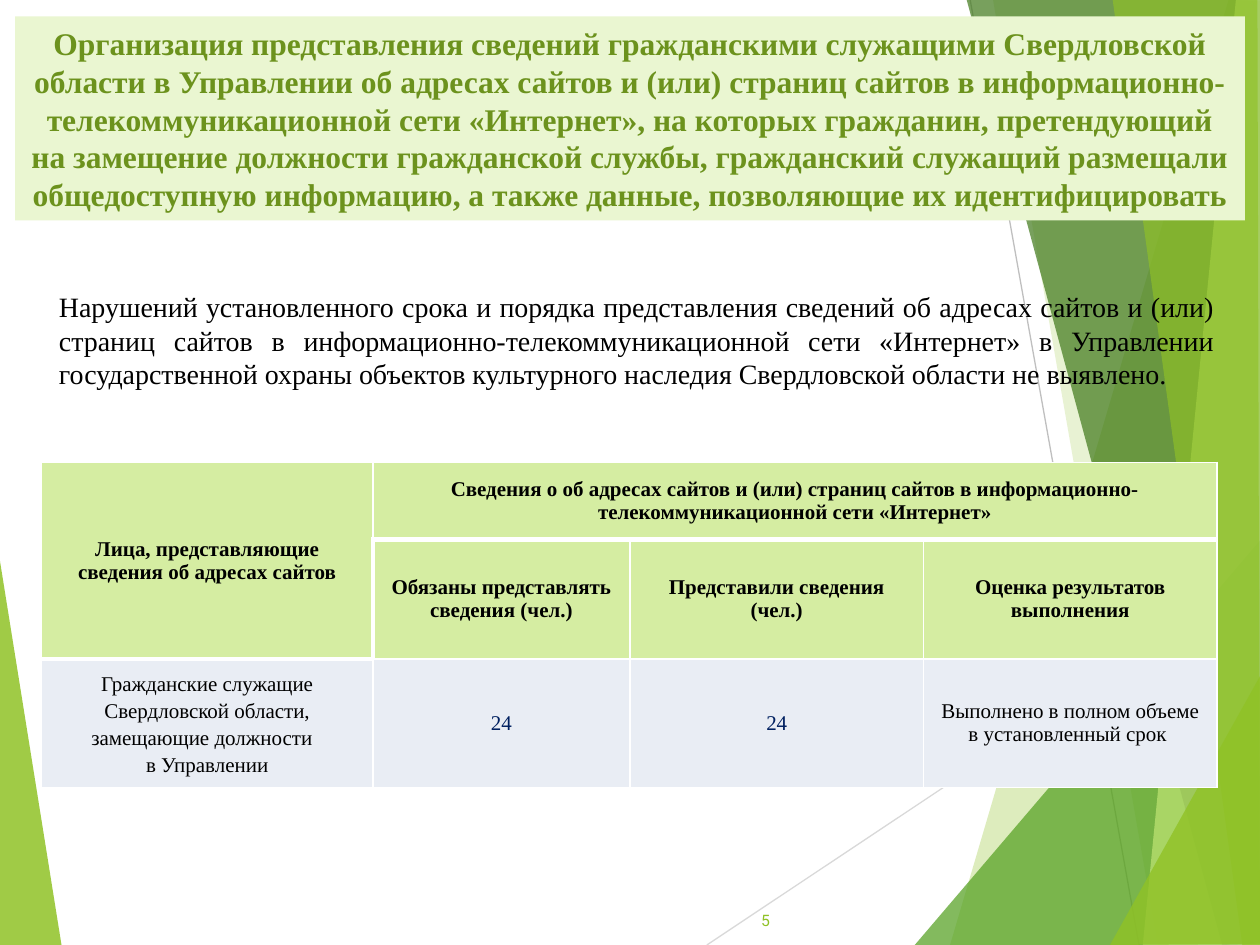
from lxml import etree
from pptx import Presentation
from pptx.dml.color import RGBColor
from pptx.enum import shapes, text
from pptx.oxml.ns import qn
from pptx.util import Inches, Pt

SERIF = "Times New Roman"
BLACK, WHITE, LIME, NAVY = "000000", "FFFFFF", "90C226", "002060"
HEAD_FILL, BODY_FILL = "D5EDA2", "E9EDF4"
CENTER, JUSTIFY, RIGHT = (text.PP_ALIGN.CENTER, text.PP_ALIGN.JUSTIFY,
                          text.PP_ALIGN.RIGHT)

TITLE = ("Организация представления сведений гражданскими служащими Свердловской "
         "области в Управлении об адресах сайтов и (или) страниц сайтов в "
         "информационно-телекоммуникационной сети «Интернет», на которых гражданин, "
         "претендующий на замещение должности гражданской службы, гражданский "
         "служащий размещали общедоступную информацию, а также данные, позволяющие "
         "их идентифицировать")
FINDING = ("Нарушений установленного срока и порядка представления сведений об адресах "
           "сайтов и (или) страниц сайтов в информационно-телекоммуникационной сети "
           "«Интернет» в Управлении государственной охраны объектов культурного "
           "наследия Свердловской области не выявлено.")
PAGE = "5"

ROWS = [
    ["Лица, представляющие сведения об адресах сайтов",
     "Сведения о об адресах сайтов и (или) страниц сайтов в "
     "информационно-телекоммуникационной сети «Интернет»", "", ""],
    ["", "Обязаны представлять сведения (чел.)", "Представили сведения (чел.)",
     "Оценка результатов выполнения"],
    ["Гражданские служащие Свердловской области, замещающие должности  \nв Управлении",
     "24", "24", "Выполнено в полном объеме в установленный срок "],
]
COL_WIDTHS = [2.63, 2.04, 2.33, 2.33]
ROW_HEIGHTS = [0.61, 0.95, 1.02]
MERGES = [((0, 0), (1, 0)), ((0, 1), (0, 3))]
# Thick rules enclose the headings: cell -> sides
THICK = {(0, 0): "B", (1, 0): "RB", (2, 0): "T",
         (0, 1): "B", (0, 2): "B", (0, 3): "B",
         (1, 1): "LT", (1, 2): "T", (1, 3): "T"}

# Background facets: colour, opacity in percent, corners
LEFT_FACET = (LIME, 85, [(-0.01, 4.39), (0.49, 7.51), (-0.01, 7.5)])
RIGHT_FACETS = [
    (LIME, 30, [(9.75, 0), (7.54, 7.5), (10.02, 7.51), (10.01, 0.01)]),
    (LIME, 20, [(7.88, -0.01), (9.19, 7.5), (10.01, 7.5), (10.01, -0.01)]),
    ("54A021", 72, [(7.26, 7.5), (10, 4.29), (10.01, 7.5)]),
    ("3F7819", 70, [(7.67, -0.01), (9.7, 7.5), (10.01, 7.49), (10.01, -0.01)]),
    ("C0E474", 70, [(9.81, -0.01), (9.07, 7.5), (10.01, 7.5), (10, -0.01)]),
    (LIME, 65, [(8.83, -0.01), (9.86, 7.5), (10, 7.5), (9.98, -0.01)]),
    (LIME, 80, [(8.81, 7.5), (10.01, 5.35), (10.01, 7.49)]),
]
RAYS = [("D9D9D9", (5.61, 7.5), (10.01, 4.57)),
        ("BFBFBF", (7.7, 0), (9.04, 7.5))]


def rgb(value):
    return RGBColor.from_string(value)


def inches(values):
    return [Inches(v) for v in values]


def write(frame, words, color, align=CENTER, spacing=None, **font):
    paragraph = frame.paragraphs[0]
    paragraph.text = words
    paragraph.alignment = align
    if spacing:
        paragraph.line_spacing = spacing
    for run in paragraph.runs:
        for name, value in ({"name": SERIF, "bold": False} | font).items():
            setattr(run.font, name, value)
        run.font.color.rgb = rgb(color)


def add_facet(slide, color, opacity, corners):
    start, *rest = [inches(corner) for corner in corners]
    builder = slide.shapes.build_freeform(*start)
    builder.add_line_segments(rest, close=True)
    facet = builder.convert_to_shape()
    facet.shadow.inherit = False
    facet.line.fill.background()
    facet.fill.solid()
    facet.fill.fore_color.rgb = rgb(color)
    tint = facet.fill._xPr.find(".//" + qn("a:srgbClr"))
    etree.SubElement(tint, qn("a:alpha"), val=str(opacity * 1000))


def add_ray(slide, color, start, end):
    ray = slide.shapes.add_connector(shapes.MSO_CONNECTOR.STRAIGHT,
                                     *inches(start + end))
    ray.line.color.rgb = rgb(color)
    ray.line.width = Pt(0.75)
    etree.SubElement(ray._element.spPr, qn("a:effectLst"))


def add_text(slide, box, words, color, anchor, **style):
    frame = slide.shapes.add_textbox(*inches(box)).text_frame
    frame.word_wrap = True
    frame.vertical_anchor = anchor
    write(frame, words, color, **style)


def set_borders(cell, thick):
    properties = cell._tc.get_or_add_tcPr()
    for side in "LRTB":
        width = Pt(3 if side in thick else 1)
        border = etree.SubElement(properties, qn("a:ln" + side), w=str(width))
        fill = etree.SubElement(border, qn("a:solidFill"))
        etree.SubElement(fill, qn("a:srgbClr"), val=WHITE)


def add_results(slide):
    box = (0.33, 3.67, sum(COL_WIDTHS), sum(ROW_HEIGHTS))
    table = slide.shapes.add_table(len(ROWS), len(COL_WIDTHS), *inches(box)).table
    table.first_row = table.horz_banding = False
    for column, width in zip(table.columns, COL_WIDTHS):
        column.width = Inches(width)
    for row, height in zip(table.rows, ROW_HEIGHTS):
        row.height = Inches(height)
    for first, last in MERGES:
        table.cell(*first).merge(table.cell(*last))
    for r, row in enumerate(ROWS):
        heading = r < 2
        for c, words in enumerate(row):
            cell = table.cell(r, c)
            set_borders(cell, THICK.get((r, c), ""))
            cell.fill.solid()
            cell.fill.fore_color.rgb = rgb(HEAD_FILL if heading else BODY_FILL)
            cell.vertical_anchor = text.MSO_ANCHOR.MIDDLE
            if words:
                write(cell.text_frame, words, NAVY if words.isdigit() else BLACK,
                      spacing=1.15 if (r, c) == (2, 0) else None,
                      size=Pt(12), bold=heading)


def main():
    deck = Presentation()
    deck.slide_width, deck.slide_height = inches((10, 7.5))
    slide = deck.slides.add_slide(deck.slide_layouts[6])

    # Background
    add_facet(slide, *LEFT_FACET)
    for ray in RAYS:
        add_ray(slide, *ray)
    for facet in RIGHT_FACETS:
        add_facet(slide, *facet)

    # Title banner
    banner = slide.shapes.add_shape(shapes.MSO_SHAPE.RECTANGLE,
                                    *inches((0.12, 0.13, 9.76, 1.62)))
    banner.shadow.inherit = False
    banner.line.fill.background()
    banner.fill.solid()
    banner.fill.fore_color.rgb = rgb("EAF6D1")
    banner.text_frame.word_wrap = True
    write(banner.text_frame, TITLE, "6C921D", size=Pt(18), bold=True)

    # Results table, finding and page number
    add_results(slide)
    add_text(slide, (0.37, 2.25, 9.37, 0.91), FINDING, BLACK, text.MSO_ANCHOR.TOP,
             align=JUSTIFY, size=Pt(16))
    add_text(slide, (4.21, 7.1, 2, 0.4), PAGE, LIME, text.MSO_ANCHOR.MIDDLE,
             align=RIGHT, size=Pt(9), name="Roboto")

    deck.save("out.pptx")


if __name__ == "__main__":
    main()
